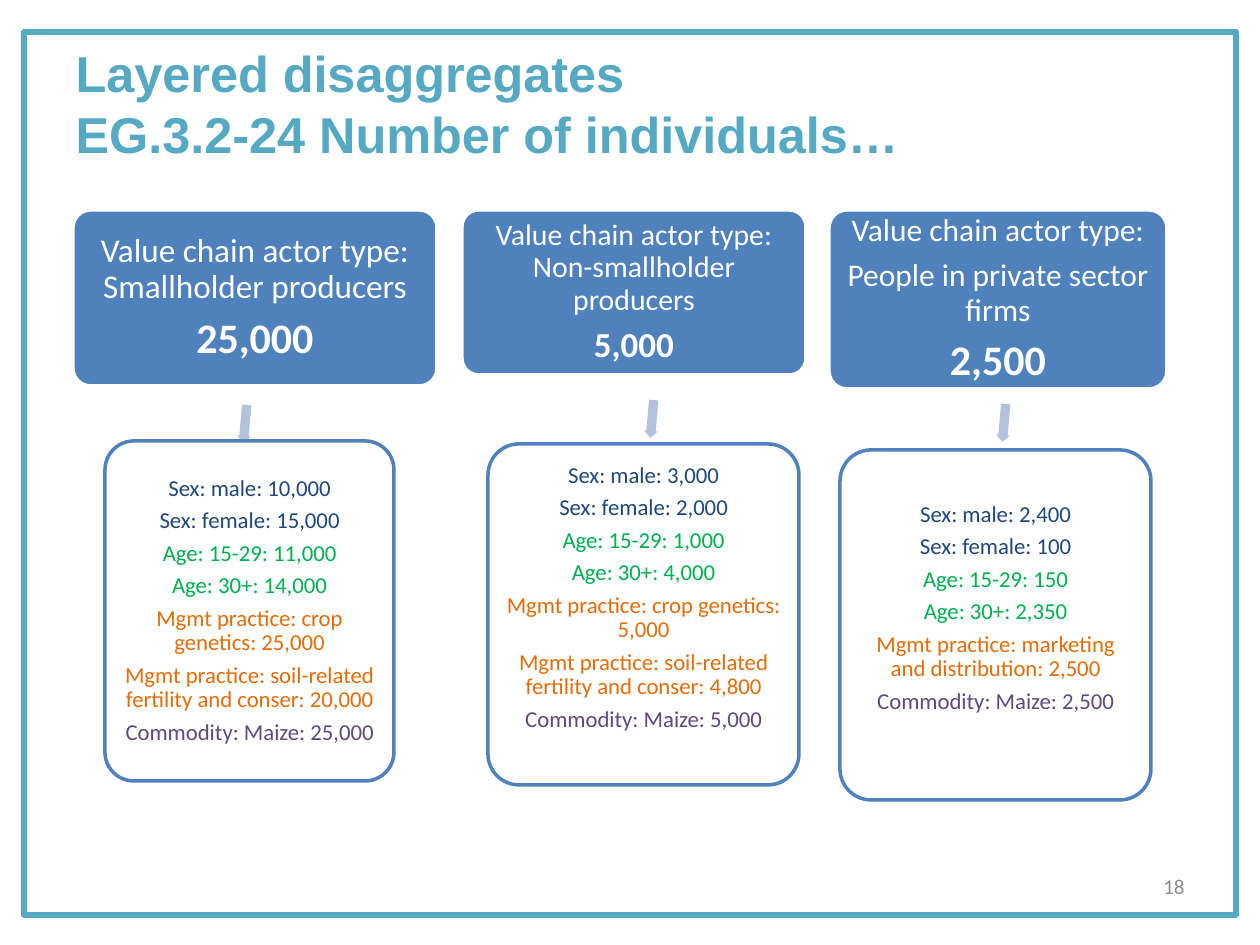
from dataclasses import dataclass

from pptx import Presentation
from pptx.dml.color import RGBColor
from pptx.enum.shapes import MSO_SHAPE
from pptx.enum.text import MSO_ANCHOR, MSO_AUTO_SIZE, PP_ALIGN
from pptx.util import Emu, Pt

RECTANGLE = MSO_SHAPE.RECTANGLE
ROUNDED = MSO_SHAPE.ROUNDED_RECTANGLE
ARROW = MSO_SHAPE.RIGHT_ARROW
LEFT, CENTER, RIGHT = PP_ALIGN.LEFT, PP_ALIGN.CENTER, PP_ALIGN.RIGHT
MIDDLE = MSO_ANCHOR.MIDDLE
NO_FIT = MSO_AUTO_SIZE.NONE

EMU_PER_PX = 914400 / 126
PAGE_WIDTH, PAGE_HEIGHT = 1260, 945
TITLE_ONLY = 5


def px(length):
    return Emu(round(length * EMU_PER_PX))


@dataclass(frozen=True)
class Theme:
    accent: str = "55A9C2"
    blue: str = "4F81BD"
    arrow: str = "B3C1DB"
    white: str = "FFFFFF"
    grey: str = "8C8C8C"
    sex: str = "1F497D"
    age: str = "00B050"
    practice: str = "E46C0A"
    commodity: str = "604A7B"
    heading_font: str = "Arial"
    body_font: str = "Calibri"
    title_size: float = 28.8
    detail_size: int = 13
    number_size: int = 12


THEME = Theme()
DETAIL_COLORS = {
    "Sex": THEME.sex,
    "Age": THEME.age,
    "Mgmt practice": THEME.practice,
    "Commodity": THEME.commodity,
}


@dataclass(frozen=True)
class ActorType:
    header_at: tuple
    header_inset: int
    header_lines: list
    header_size: int
    total: str
    total_size: int
    arrow_at: tuple
    detail_at: tuple
    detail_inset: int
    bottom_space: int
    details: list


ACTOR_TYPES = [
    ActorType(
        (73, 210, 364, 176), 9,
        ["Value chain actor type: Smallholder producers"], 19, "25,000", 24,
        (226, 417), (105, 441, 289, 340), 11, 0,
        ["Sex: male: 10,000", "Sex: female: 15,000",
         "Age: 15-29: 11,000", "Age: 30+: 14,000",
         "Mgmt practice: crop genetics: 25,000",
         "Mgmt practice: soil-related fertility and conser: 20,000",
         "Commodity: Maize: 25,000"]),
    ActorType(
        (462, 210, 344, 165), 8,
        ["Value chain actor type: Non-smallholder producers"], 17, "5,000", 20,
        (633, 412), (488, 444, 311, 341), 9, 33,
        ["Sex: male: 3,000", "Sex: female: 2,000",
         "Age: 15-29: 1,000", "Age: 30+: 4,000",
         "Mgmt practice: crop genetics: 5,000",
         "Mgmt practice: soil-related fertility and conser: 4,800",
         "Commodity: Maize: 5,000"]),
    ActorType(
        (829, 210, 338, 179), 9,
        ["Value chain actor type:", "People in private sector firms"],
        18, "2,500", 24,
        (985, 416), (840, 450, 311, 350), 11, 33,
        ["Sex: male: 2,400", "Sex: female: 100",
         "Age: 15-29: 150", "Age: 30+: 2,350",
         "Mgmt practice: marketing and distribution: 2,500",
         "Commodity: Maize: 2,500"]),
]


class SlideBuilder:
    """Holds the theme and the current slide, and draws each kind of element."""

    def __init__(self, page, theme):
        self.page = page
        self.theme = theme

    def format_text(self, para, size, color, font=None, bold=False):
        values = {"name": font or self.theme.body_font, "size": Pt(size), "bold": bold}
        for name, value in values.items():
            setattr(para.font, name, value)
        para.font.color.rgb = RGBColor.from_string(color)

    def format_frame(self, frame):
        values = {"word_wrap": True, "auto_size": NO_FIT, "vertical_anchor": MIDDLE}
        for name, value in values.items():
            setattr(frame, name, value)

    def title(self, text, at):
        box = self.page.shapes.title
        for name, value in zip(("left", "top", "width", "height"), at):
            setattr(box, name, px(value))
        box.text_frame.text = text
        self.format_frame(box.text_frame)
        para = box.text_frame.paragraphs[0]
        para.alignment = LEFT
        self.format_text(para, self.theme.title_size, self.theme.accent,
                         self.theme.heading_font, bold=True)

    def shape(self, preset, at, fill=None, line=None, line_width=2):
        shape = self.page.shapes.add_shape(preset, *map(px, at))
        shape.shadow.inherit = False
        if fill:
            shape.fill.solid()
            shape.fill.fore_color.rgb = RGBColor.from_string(fill)
        else:
            shape.fill.background()
        if line:
            shape.line.color.rgb = RGBColor.from_string(line)
            shape.line.width = Pt(line_width)
        else:
            shape.line.fill.background()
        return shape

    def card(self, at, fill, line, inset, lines, bottom_space=0):
        """Draw a rounded box; lines holds (text, size, color, bold) for each paragraph."""
        card = self.shape(ROUNDED, at, fill, line)
        card.adjustments[0] = 0.1
        frame = card.text_frame
        self.format_frame(frame)
        for side in ("left", "top", "right"):
            setattr(frame, f"margin_{side}", px(inset))
        frame.margin_bottom = px(inset + bottom_space)
        for index, (text, size, color, bold) in enumerate(lines):
            para = frame.add_paragraph() if index else frame.paragraphs[0]
            para.text = text
            para.alignment = CENTER
            para.line_spacing = 0.9
            para.space_after = Pt(round(size * 0.35, 1))
            self.format_text(para, size, color, bold=bold)

    def arrow(self, left, top):
        arrow = self.shape(ARROW, (left, top, 38, 14), self.theme.arrow)
        arrow.adjustments[0] = 0.67
        arrow.rotation = 95.1

    def page_number(self, text, at):
        box = self.page.shapes.add_textbox(*map(px, at))
        self.format_frame(box.text_frame)
        para = box.text_frame.paragraphs[0]
        para.text = text
        para.alignment = RIGHT
        self.format_text(para, self.theme.number_size, self.theme.grey)

    def actor_type(self, actor):
        theme = self.theme
        header = [(text, actor.header_size, theme.white, False)
                  for text in actor.header_lines]
        header.append((actor.total, actor.total_size, theme.white, True))
        details = [(text, theme.detail_size, DETAIL_COLORS[text.split(":")[0]], False)
                   for text in actor.details]
        self.card(actor.header_at, theme.blue, theme.white, actor.header_inset, header)
        self.arrow(*actor.arrow_at)
        self.card(actor.detail_at, theme.white, theme.blue, actor.detail_inset,
                  details, actor.bottom_space)


def main():
    deck = Presentation()
    deck.slide_width, deck.slide_height = px(PAGE_WIDTH), px(PAGE_HEIGHT)
    page = deck.slides.add_slide(deck.slide_layouts[TITLE_ONLY])
    builder = SlideBuilder(page, THEME)
    builder.shape(RECTANGLE, (24, 32, 1212, 883), line=THEME.accent, line_width=3)
    builder.title("Layered disaggregates\vEG.3.2-24 Number of individuals…",
                  (63, 38, 1134, 130))
    for actor in ACTOR_TYPES:
        builder.actor_type(actor)
    builder.page_number("18", (903, 861, 294, 50))
    deck.save("out.pptx")


if __name__ == "__main__":
    main()
